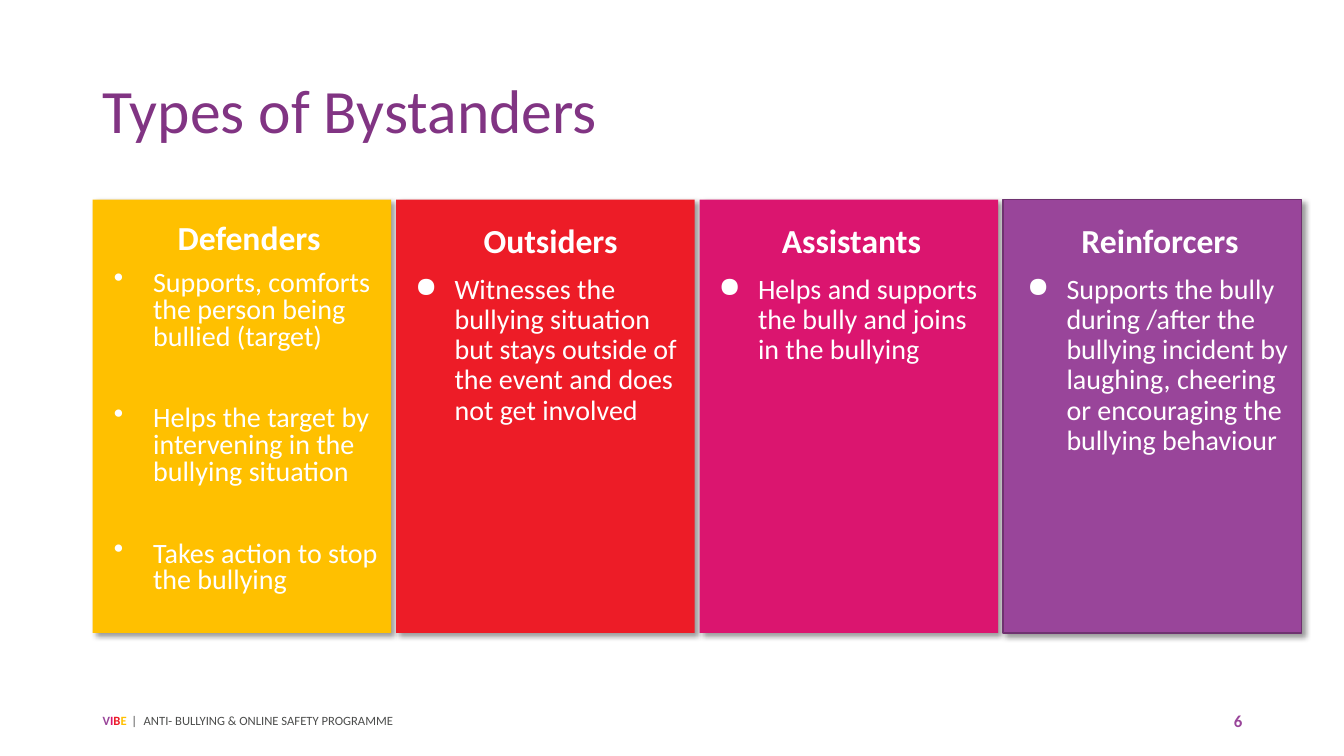
from pptx import Presentation
from pptx.dml.color import RGBColor
from pptx.enum.shapes import MSO_SHAPE
from pptx.enum.text import MSO_ANCHOR, PP_ALIGN
from pptx.oxml import parse_xml
from pptx.oxml.ns import nsdecls
from pptx.util import Inches, Pt

RECTANGLE = MSO_SHAPE.RECTANGLE
TOP, MIDDLE = MSO_ANCHOR.TOP, MSO_ANCHOR.MIDDLE
LEFT, CENTER, RIGHT = PP_ALIGN.LEFT, PP_ALIGN.CENTER, PP_ALIGN.RIGHT

FONT = "Calibri"
WHITE, PURPLE, PINK, RED, YELLOW = "FFFFFF", "99459A", "DB156F", "ED1C27", "FFC000"
MARGIN, CARD_TOP, CARD_STEP = 0.92, 1.98, 3.01
CARD_WIDTH, CARD_HEIGHT = 2.96, 4.3

# Text offset and width are in inches; gap is the space between bullets in points
CARDS = [
    {"name": "Defenders", "fill": YELLOW, "line": None, "offset": 0, "width": 2.98,
     "bullet": "•", "spacing": 0.8, "gap": 39,
     "points": ["Supports, comforts the person being bullied (target)",
                "Helps the target by intervening in the bullying situation",
                "Takes action to stop the bullying"]},
    {"name": "Outsiders", "fill": RED, "line": None, "offset": -0.02, "width": 2.98,
     "bullet": "●", "spacing": 0.9, "gap": 10,
     "points": ["Witnesses the bullying situation but stays outside of the event "
                "and does not get involved"]},
    {"name": "Assistants", "fill": PINK, "line": None, "offset": -0.02, "width": 2.93,
     "bullet": "●", "spacing": 0.9, "gap": 10,
     "points": ["Helps and supports the bully and joins in the bullying"]},
    {"name": "Reinforcers", "fill": PURPLE, "line": "6F3270", "offset": 0.03, "width": 2.93,
     "bullet": "●", "spacing": 0.9, "gap": 10,
     "points": ["Supports the bully during /after the bullying incident by laughing, "
                "cheering or encouraging the bullying behaviour"]},
]


def colour(value):
    return RGBColor.from_string(value)


def add_text_frame(page, left, top, width, height, anchor):
    box = page.shapes.add_textbox(Inches(left), Inches(top), Inches(width), Inches(height))
    frame = box.text_frame
    frame.word_wrap = True
    frame.vertical_anchor = anchor
    return frame


def format_para(para, **values):
    for name, value in values.items():
        setattr(para, name, value)


def add_span(para, text, size, fill, bold=False):
    span = para.add_run()
    span.text = text
    for name, value in {"name": FONT, "size": Pt(size), "bold": bold}.items():
        setattr(span.font, name, value)
    span.font.color.rgb = colour(fill)
    return span


def set_indent(para, left, first=0, bullet=None):
    properties = para._p.get_or_add_pPr()
    properties.set("marL", str(Inches(left)))
    properties.set("indent", str(Inches(first)))
    if bullet:
        properties.append(parse_xml(
            f'<a:buClr {nsdecls("a")}><a:srgbClr val="{WHITE}"/></a:buClr>'))
        properties.append(parse_xml(f'<a:buChar {nsdecls("a")} char="{bullet}"/>'))


def add_shadow(shape):
    shape.shadow.inherit = False
    effects = shape._element.spPr.find("{*}effectLst")
    effects.append(parse_xml(
        f'<a:outerShdw {nsdecls("a")} blurRad="{Pt(4)}" dist="{Pt(3)}" dir="{45 * 60000}">'
        '<a:srgbClr val="000000"><a:alpha val="40000"/></a:srgbClr></a:outerShdw>'))


def add_title(page, left, top, width, height):
    para = add_text_frame(page, left, top, width, height, MIDDLE).paragraphs[0]
    para.line_spacing = 0.9
    add_span(para, "Types of Bystanders", 44, "813483")


def add_card(page, card, left, top, width, height):
    # Coloured panel
    panel = page.shapes.add_shape(RECTANGLE, Inches(left), Inches(top),
                                  Inches(width), Inches(height))
    panel.fill.solid()
    panel.fill.fore_color.rgb = colour(card["fill"])
    if card["line"]:
        panel.line.color.rgb = colour(card["line"])
        panel.line.width = Pt(1)
    else:
        panel.line.fill.background()
    add_shadow(panel)

    # Heading
    frame = add_text_frame(page, left + card["offset"], top + 0.2,
                           card["width"], height - 0.2, TOP)
    heading = frame.paragraphs[0]
    format_para(heading, alignment=CENTER, line_spacing=card["spacing"])
    set_indent(heading, 0.12)
    add_span(heading, card["name"], 24, WHITE, True)

    # Bullets
    for index, point in enumerate(card["points"]):
        para = frame.add_paragraph()
        format_para(para, alignment=LEFT, line_spacing=card["spacing"],
                    space_before=Pt(card["gap"] if index else 10))
        set_indent(para, 0.5, -0.39, card["bullet"])
        add_span(para, point, 20, WHITE)


def add_footer(page, left, top, width, height):
    # Programme name
    para = add_text_frame(page, left, top, 4.5, height, MIDDLE).paragraphs[0]
    for letter, fill in zip("VIBE", [PURPLE, PINK, RED, YELLOW]):
        add_span(para, letter, 9, fill, True)
    divider = add_span(para, " | ", 9, "4C4D4C")
    divider.font._element.set("spc", "130")
    add_span(para, "ANTI- BULLYING & ONLINE SAFETY PROGRAMME", 9, "4C4D4C")

    # Page number
    number = add_text_frame(page, left + width - 3, top, 3, height, MIDDLE).paragraphs[0]
    number.alignment = RIGHT
    add_span(number, "6", 12, PURPLE, True)


def main():
    deck = Presentation()
    deck.slide_width, deck.slide_height = Inches(13.33), Inches(7.5)
    page = deck.slides.add_slide(deck.slide_layouts[6])
    add_title(page, MARGIN, 0.4, 11.5, 1.45)
    for index, card in enumerate(CARDS):
        add_card(page, card, MARGIN + index * CARD_STEP, CARD_TOP, CARD_WIDTH, CARD_HEIGHT)
    add_footer(page, MARGIN, 6.95, 11.5, 0.4)
    deck.save("out.pptx")


if __name__ == "__main__":
    main()
